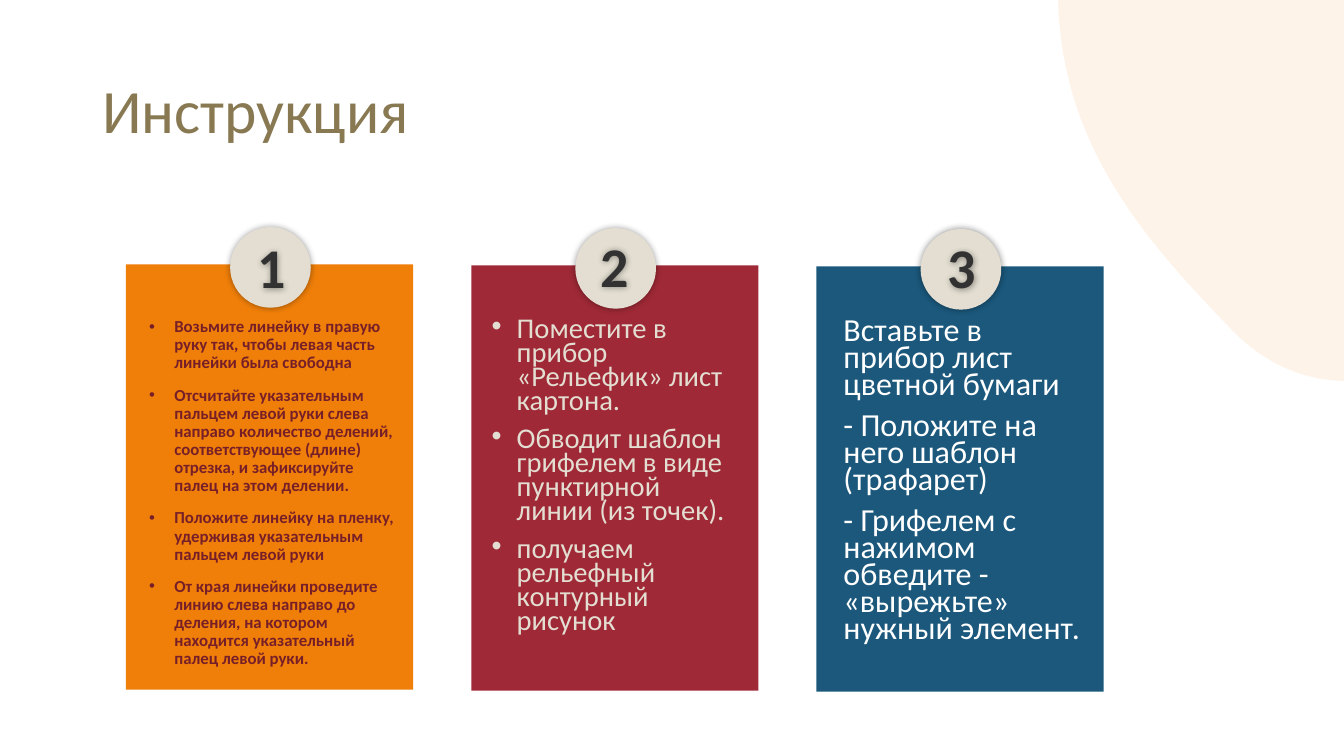
from lxml import etree
from pptx import Presentation
from pptx.dml.color import RGBColor
from pptx.enum.shapes import MSO_SHAPE as SHAPE
from pptx.enum.text import MSO_ANCHOR as ANCHOR, PP_ALIGN as ALIGN
from pptx.oxml.ns import qn
from pptx.util import Pt

TITLE = "Инструкция"
CARDS = [
    dict(fill="F07F09", color="771F28", size=12, bold=True, spacing=0.9, bullet=True,
         inset=9.4, nudge=(0.7, 0.7), lines=[
             "Возьмите линейку в правую руку так, чтобы левая часть линейки была свободна",
             "Отсчитайте указательным пальцем левой руки слева направо количество делений, "
             "соответствующее (длине) отрезка, и зафиксируйте палец на этом делении.",
             "Положите линейку на пленку, удерживая указательным пальцем левой руки",
             "От края линейки проведите линию слева направо до деления, на котором "
             "находится указательный палец левой руки."]),
    dict(fill="9F2936", color="E3DED1", size=20.4, bold=False, spacing=0.7, bullet=True,
         inset=7.4, nudge=(-0.7, -1.4), lines=[
             "Поместите в прибор «Рельефик» лист картона.",
             "Обводит шаблон грифелем в виде пунктирной линии (из точек).",
             "получаем рельефный контурный рисунок"]),
    dict(fill="1B587C", color="FFFFFF", size=22.9, bold=False, spacing=0.7, bullet=False,
         inset=12.2, nudge=(0.7, -0.7), lines=[
             "Вставьте в прибор лист цветной бумаги",
             "- Положите на него шаблон (трафарет)",
             "- Грифелем с нажимом обведите - «вырежьте» нужный элемент."]),
]
BLOB_CURVES = [
    [(755.7, 0), (758.6, 107), (821.4, 175), (880, 235.7)],
    [(880, 235.7), (901.4, 257.9), (928.6, 271.4), (960, 272.1)],
]
WIDTH, HEIGHT = 960, 540
CARD_X, CARD_Y, CARD_W, CARD_H = 90, 188.8, 205.2, 303.8
STEP_X, STEP_Y = 246.6, 0.7
CIRCLE = 57.6
CIRCLE_SHIFT, CIRCLE_RISE = 74.4, 26.6
BODY_DROP, BODY_W, BODY_H = 34.9, 190, 251.3


def rgb(value):
    return RGBColor.from_string(value)


def paint(sp, color):
    sp.shadow.inherit = False
    sp.fill.solid()
    sp.fill.fore_color.rgb = rgb(color)
    sp.line.fill.background()


def add_shadow(sp, blur, dist, alpha):
    sp.shadow.inherit = False
    effects = sp._element.spPr.find(qn("a:effectLst"))
    shadow = etree.SubElement(effects, qn("a:outerShdw"), blurRad=str(Pt(blur)),
                              dist=str(Pt(dist)), dir="5400000", algn="ctr", rotWithShape="0")
    color = etree.SubElement(shadow, qn("a:srgbClr"), val="000000")
    etree.SubElement(color, qn("a:alpha"), val=str(alpha * 1000))


def add_text(s, box, lines, size, color, bold=False, spacing=1, bullet=False,
             align=ALIGN.LEFT, anchor=ANCHOR.TOP):
    sp = s.shapes.add_textbox(*map(Pt, box))
    tf = sp.text_frame
    tf.word_wrap = True
    tf.vertical_anchor = anchor
    for i, line in enumerate(lines):
        p = tf.add_paragraph() if i else tf.paragraphs[0]
        p.text = line
        p.alignment = align
        p.line_spacing = spacing
        if i:
            p.space_before = Pt(10)
        if bullet:
            pPr = p._p.get_or_add_pPr()
            pPr.set("marL", str(Pt(18)))
            pPr.set("indent", str(-Pt(18)))
            etree.SubElement(pPr, qn("a:buFont"), typeface="Arial")
            etree.SubElement(pPr, qn("a:buChar"), char="•")
        font = p.runs[0].font
        font.name, font.size, font.bold = "Calibri", Pt(size), bold
        font.color.rgb = rgb(color)
    return sp


def bezier(a, b, c, d, steps=24):
    for i in range(1, steps + 1):
        t = i / steps
        u = 1 - t
        yield tuple(Pt(u**3 * e + 3 * u * u * t * f + 3 * u * t * t * g + t**3 * h)
                    for e, f, g, h in zip(a, b, c, d))


def add_blob(s):
    x, y = BLOB_CURVES[0][0]
    outline = s.shapes.build_freeform(Pt(x), Pt(y))
    for curve in BLOB_CURVES:
        outline.add_line_segments(list(bezier(*curve)), close=False)
    outline.add_line_segments([(Pt(WIDTH), 0)], close=True)
    sp = outline.convert_to_shape()
    paint(sp, "FDE5CD")
    color = sp._element.spPr.find(qn("a:solidFill"))[0]
    etree.SubElement(color, qn("a:alpha"), val="46000")


def add_card(s, i, card):
    x, y = CARD_X + i * STEP_X, CARD_Y + i * STEP_Y
    sp = s.shapes.add_shape(SHAPE.RECTANGLE, Pt(x), Pt(y), Pt(CARD_W), Pt(CARD_H))
    paint(sp, card["fill"])
    cx, cy = x + CIRCLE_SHIFT, y - CIRCLE_RISE
    sp = s.shapes.add_shape(SHAPE.OVAL, Pt(cx), Pt(cy), Pt(CIRCLE), Pt(CIRCLE))
    paint(sp, "E3DED1")
    add_shadow(sp, 5, 0, 40)
    dx, dy = card["nudge"]
    sp = add_text(s, (cx + dx, cy + dy, CIRCLE, 55.4), [str(i + 1)], 40, "323232",
                  bold=True, align=ALIGN.CENTER)
    add_shadow(sp, 5, 0, 40)
    add_text(s, (x + card["inset"], y + BODY_DROP, BODY_W, BODY_H), card["lines"],
             card["size"], card["color"], card["bold"], card["spacing"], card["bullet"])


def main():
    prs = Presentation()
    prs.slide_width, prs.slide_height = Pt(WIDTH), Pt(HEIGHT)
    s = prs.slides.add_slide(prs.slide_layouts[6])
    add_blob(s)
    add_text(s, (66, 28.8, 828, 104.4), [TITLE], 44, "887952", spacing=0.9,
             anchor=ANCHOR.MIDDLE)
    for i, card in enumerate(CARDS):
        add_card(s, i, card)
    prs.save("out.pptx")


if __name__ == "__main__":
    main()
